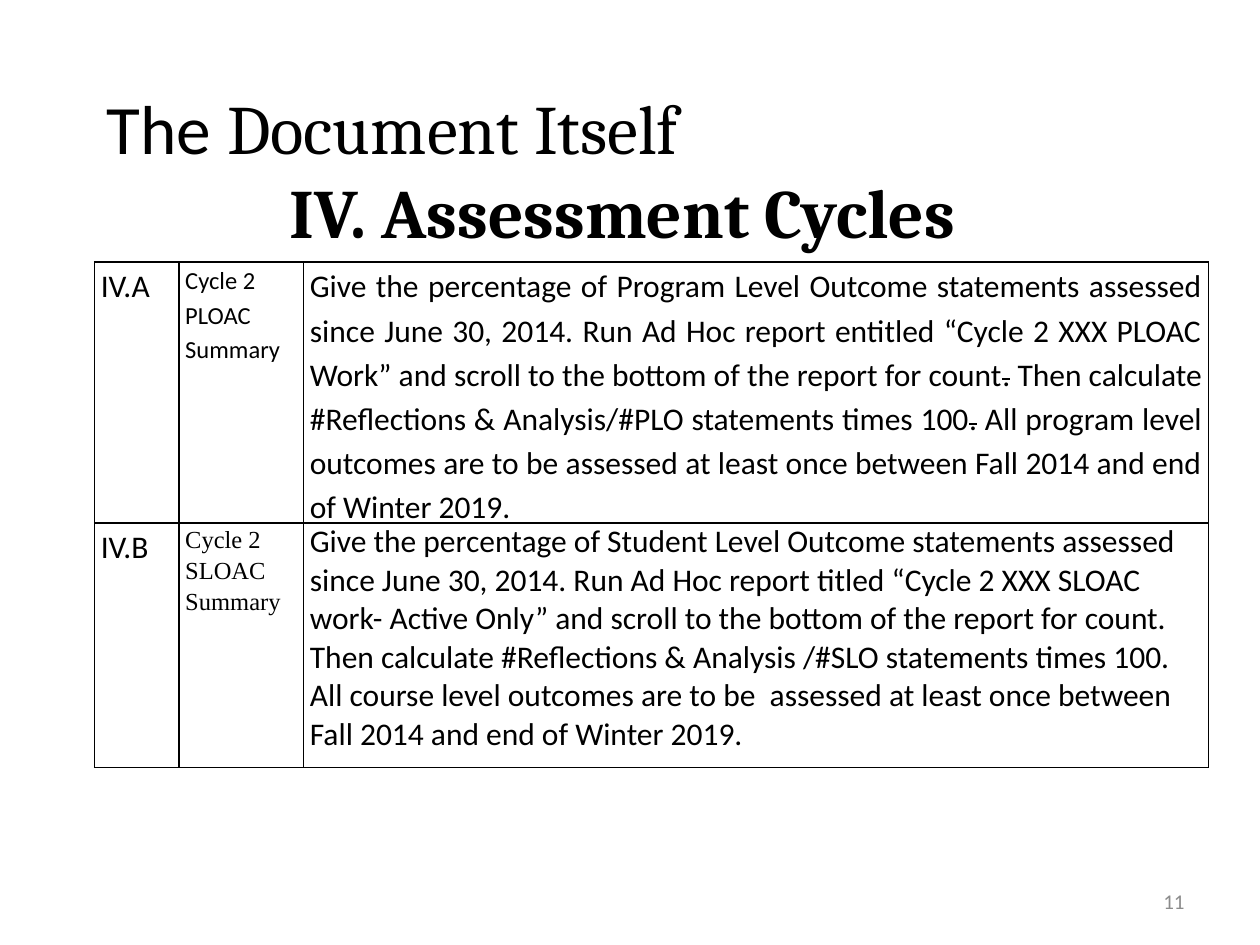
from dataclasses import dataclass

from lxml.etree import SubElement
from pptx import Presentation
from pptx.dml.color import RGBColor
from pptx.enum.text import MSO_ANCHOR, PP_ALIGN
from pptx.oxml.ns import qn
from pptx.util import Inches, Pt

WIDTH, HEIGHT = 10, 7.5
COLORS = {"ink": "000000", "muted": "8C8C8C", "paper": "FFFFFF"}
COLUMN_SHARES = (0.067, 0.099, 0.718)  # of the slide width
ROW_SHARES = (0.276, 0.259)  # of the slide height


@dataclass(frozen=True)
class Span:
    text: str
    size: float = 18
    font: str = "Calibri"
    color: str = "ink"
    bold: bool = False
    strike: bool = False


@dataclass(frozen=True)
class Para:
    spans: tuple[Span, ...]
    align: PP_ALIGN = PP_ALIGN.LEFT
    spacing: float = 1.0
    indent: float = 0


def write_paras(frame, paras: list[Para], **layout) -> None:
    """Fill a text frame, with its layout given as attribute values."""
    for name, value in layout.items():
        setattr(frame, name, value)
    for index, item in enumerate(paras):
        para = frame.paragraphs[0] if index == 0 else frame.add_paragraph()
        para.alignment, para.line_spacing = item.align, item.spacing
        if item.indent:
            para._p.get_or_add_pPr().set("marL", str(Inches(item.indent)))
        for span in item.spans:
            run = para.add_run()
            run.text = span.text
            values = {"size": Pt(span.size), "name": span.font, "bold": span.bold}
            for name, value in values.items():
                setattr(run.font, name, value)
            run.font.color.rgb = RGBColor.from_string(COLORS[span.color])
            if span.strike:
                run.font._element.set("strike", "sngStrike")


def add_text(page, left: float, top: float, width: float, height: float,
             paras: list[Para], **layout) -> None:
    """Add a text box placed by shares of the slide's size."""
    box = page.shapes.add_textbox(Inches(left * WIDTH), Inches(top * HEIGHT),
                                  Inches(width * WIDTH), Inches(height * HEIGHT))
    write_paras(box.text_frame, paras, word_wrap=True, **layout)


def style_cell(cell) -> None:
    """Give a cell thin borders, narrow margins and a plain fill."""
    margins = {"margin_left": 0.05, "margin_right": 0.05, "margin_top": 0, "margin_bottom": 0}
    for name, value in margins.items():
        setattr(cell, name, Inches(value))
    properties = cell._tc.get_or_add_tcPr()
    for side in ("lnL", "lnR", "lnT", "lnB"):
        line = SubElement(properties, qn(f"a:{side}"), w=str(Pt(1)))
        fill = SubElement(line, qn("a:solidFill"))
        SubElement(fill, qn("a:srgbClr"), val=COLORS["ink"])
    cell.fill.solid()
    cell.fill.fore_color.rgb = RGBColor.from_string(COLORS["paper"])


def add_cycles_table(page, rows: list[list[Para]]) -> None:
    table = page.shapes.add_table(
        len(ROW_SHARES), len(COLUMN_SHARES), Inches(0.75), Inches(2.08),
        Inches(sum(COLUMN_SHARES) * WIDTH), Inches(sum(ROW_SHARES) * HEIGHT)).table
    for column, share in zip(table.columns, COLUMN_SHARES):
        column.width = Inches(share * WIDTH)
    for row, share, paras in zip(table.rows, ROW_SHARES, rows):
        row.height = Inches(share * HEIGHT)
        for cell, para in zip(row.cells, paras):
            style_cell(cell)
            write_paras(cell.text_frame, [para])


TITLE = [
    Para((Span("The ", 39.6), Span("Document Itself", 39.6, "Cambria")), indent=0.25),
    Para((Span("IV. Assessment Cycles", 39.6, "Cambria", bold=True),), indent=1.7),
]
CYCLES = [
    [
        Para((Span("IV.A"),), spacing=1.15),
        Para((Span("Cycle 2 PLOAC Summary", 14),), spacing=1.15),
        Para((
            Span("Give the percentage of Program Level Outcome statements assessed since "
                 "June 30, 2014. Run Ad Hoc report entitled “Cycle 2 XXX PLOAC Work” and "
                 "scroll to the bottom of the report for count"),
            Span(".", strike=True),
            Span(" Then calculate #Reflections & Analysis/#PLO statements times 100"),
            Span(".", strike=True),
            Span(" All program level outcomes are to be assessed at least once between "
                 "Fall 2014 and end of Winter 2019."),
        ), PP_ALIGN.JUSTIFY, 1.15),
    ],
    [
        Para((Span("IV.B"),), spacing=1.15),
        Para((Span("Cycle 2 SLOAC Summary", 14, "Times New Roman"),), spacing=1.15),
        Para((
            Span("Give the percentage of Student Level Outcome statements assessed since "
                 "June 30, 2014. Run Ad Hoc report titled “Cycle 2 XXX SLOAC work- Active "
                 "Only” and scroll to the bottom of the report for count. Then calculate "
                 "#Reflections & Analysis /#SLO statements times 100. All course level "
                 "outcomes are to be  assessed at least once between Fall 2014 and end of "
                 "Winter 2019."),
        )),
    ],
]
PAGE_NUMBER = [Para((Span("11", 12, color="muted"),), PP_ALIGN.RIGHT)]


def main() -> None:
    deck = Presentation()
    deck.slide_width, deck.slide_height = Inches(WIDTH), Inches(HEIGHT)
    page = deck.slides.add_slide(deck.slide_layouts[6])

    # Heading, table and page number
    add_text(page, 0.05, 0.04, 0.9, 0.26, TITLE,
             vertical_anchor=MSO_ANCHOR.TOP, margin_top=Inches(0.38))
    add_cycles_table(page, CYCLES)
    add_text(page, 0.717, 0.927, 0.233, 0.053, PAGE_NUMBER,
             vertical_anchor=MSO_ANCHOR.MIDDLE)
    deck.save("out.pptx")


if __name__ == "__main__":
    main()
